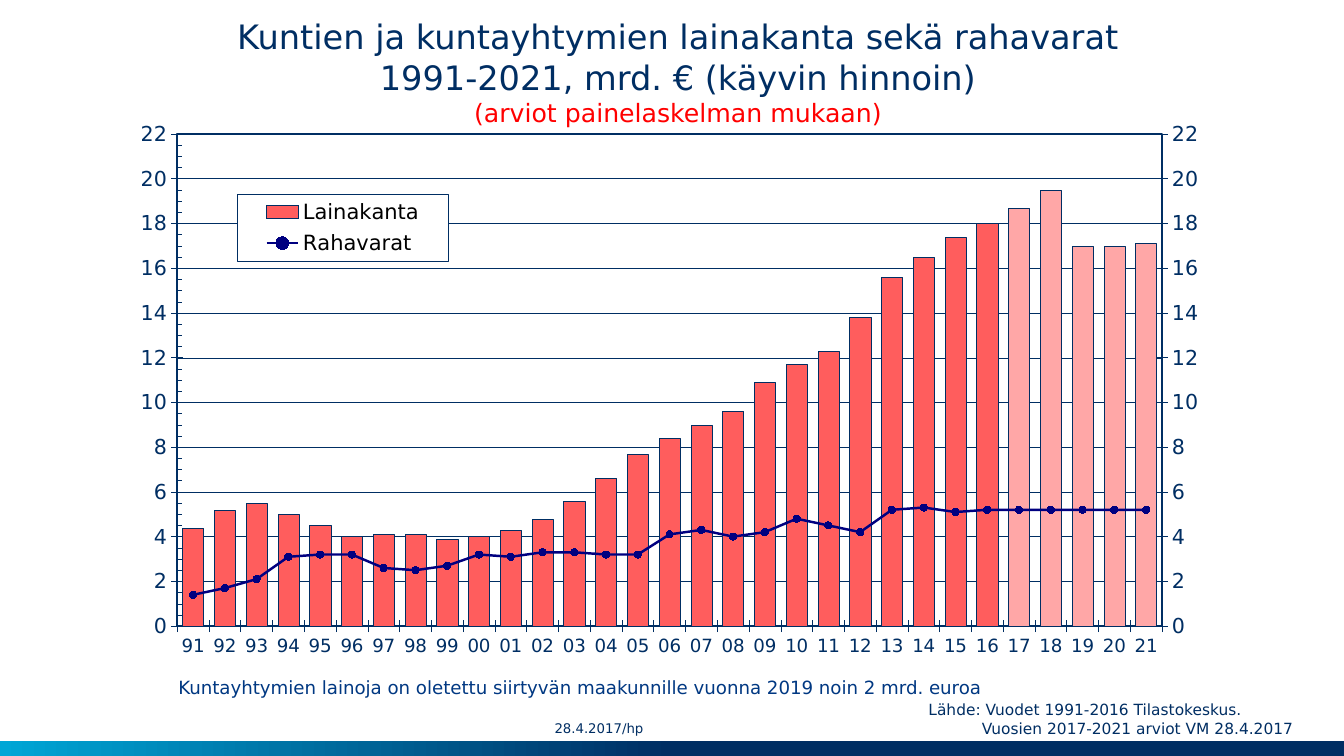
from copy import deepcopy
from dataclasses import dataclass

from pptx import Presentation, oxml, util as u
from pptx.chart import data as cd
from pptx.dml.color import RGBColor
from pptx.enum import chart as ec, dml, shapes, text
from pptx.oxml.ns import nsdecls, qn


@dataclass(frozen=True)
class Theme:
    font: str = "DejaVu Sans"
    navy: str = "002E63"
    cyan: str = "00A6D6"
    note_blue: str = "003882"
    red: str = "FF0000"
    loan: str = "FF5D5D"
    loan_forecast: str = "FFA7A7"
    cash: str = "000080"
    black: str = "000000"
    title_size: float = 24
    subtitle_size: float = 18
    legend_size: float = 15
    value_size: float = 14.7
    year_size: float = 13
    source_size: float = 11
    date_size: float = 9.5


YEARS = [f"{year % 100:02d}" for year in range(1991, 2022)]
FIRST_FORECAST = YEARS.index("17")
LOANS = [4.4, 5.2, 5.5, 5, 4.5, 4, 4.1, 4.1, 3.9, 4, 4.3, 4.8, 5.6, 6.6, 7.7, 8.4,
         9, 9.6, 10.9, 11.7, 12.3, 13.8, 15.6, 16.5, 17.4, 18, 18.7, 19.5, 17, 17, 17.1]
CASH = [1.4, 1.7, 2.1, 3.1, 3.2, 3.2, 2.6, 2.5, 2.7, 3.2, 3.1, 3.3, 3.3, 3.2, 3.2, 4.1,
        4.3, 4, 4.2, 4.8, 4.5, 4.2, 5.2, 5.3, 5.1, 5.2, 5.2, 5.2, 5.2, 5.2, 5.2]


def box(*lengths):
    return [u.Inches(length) for length in lengths]


def chart_xml(tag, body):
    return oxml.parse_xml(f"<c:{tag} {nsdecls('c', 'a')}>{body}</c:{tag}>")


def manual_layout(x, y, w, h, inner=False):
    target = '<c:layoutTarget val="inner"/>' if inner else ""
    sizes = "".join(f'<c:{k} val="{v}"/>' for k, v in zip("xywh", (x, y, w, h)))
    return chart_xml("layout", f'<c:manualLayout>{target}<c:xMode val="edge"/>'
                               f'<c:yMode val="edge"/>{sizes}</c:manualLayout>')


def frame(fill, color, points):
    return chart_xml("spPr", f'{fill}<a:ln w="{u.Pt(points)}"><a:solidFill>'
                             f'<a:srgbClr val="{color}"/></a:solidFill></a:ln>')


class LoanSlide:
    def __init__(self, slide, theme):
        self.slide, self.theme = slide, theme

    def style_font(self, font, size, color):
        font.name, font.size, font.bold = self.theme.font, u.Pt(size), False
        font.color.rgb = RGBColor.from_string(color)

    def style_line(self, line, color, points):
        line.color.rgb = RGBColor.from_string(color)
        line.width = u.Pt(points)

    def style_fill(self, fill, color):
        fill.solid()
        fill.fore_color.rgb = RGBColor.from_string(color)

    def gradient_bar(self, place):
        bar = self.slide.shapes.add_shape(shapes.MSO_SHAPE.RECTANGLE, *box(*place))
        bar.shadow.inherit = False
        bar.line.fill.background()
        bar.fill.gradient()
        bar.fill.gradient_angle = 180
        stops = ((0.5, self.theme.navy), (1, self.theme.cyan))
        for stop, (position, color) in zip(bar.fill.gradient_stops, stops):
            stop.position = position
            stop.color.rgb = RGBColor.from_string(color)

    def text_box(self, place, lines, size, color, margins=(0.1, 0.05),
                 anchor=text.MSO_ANCHOR.TOP, align=text.PP_ALIGN.LEFT):
        body = self.slide.shapes.add_textbox(*box(*place)).text_frame
        body.word_wrap, body.vertical_anchor = True, anchor
        body.margin_left = body.margin_right = u.Inches(margins[0])
        body.margin_top = body.margin_bottom = u.Inches(margins[1])
        body.text = "\n".join(lines)
        for paragraph in body.paragraphs:
            paragraph.alignment = align
            for run in paragraph.runs:
                self.style_font(run.font, size, color)
        return body

    def style_axis(self, axis, size):
        axis.major_tick_mark = ec.XL_TICK_MARK.CROSS
        self.style_font(axis.tick_labels.font, size, self.theme.navy)
        self.style_line(axis.format.line, self.theme.navy, 0.3)

    def loan_chart(self, place):
        theme = self.theme
        figures = cd.CategoryChartData(number_format="0.0")
        figures.categories = YEARS
        figures.add_series("Lainakanta", LOANS)
        figures.add_series("Rahavarat", CASH)
        chart = self.slide.shapes.add_chart(
            ec.XL_CHART_TYPE.COLUMN_CLUSTERED, *box(*place), figures).chart
        chart.has_title = False
        self.style_font(chart.font, theme.value_size, theme.navy)

        # Axes
        self.style_axis(chart.category_axis, theme.year_size)
        values = chart.value_axis
        self.style_axis(values, theme.value_size)
        values.minimum_scale, values.maximum_scale, values.major_unit = 0, 22, 2
        values.tick_labels.number_format = "0"
        values.tick_labels.number_format_is_linked = False
        values.has_major_gridlines = True
        self.style_line(values.major_gridlines.format.line, theme.navy, 0.25)
        values.major_gridlines.format.line.dash_style = dml.MSO_LINE.ROUND_DOT
        self.add_cash_axis(chart)
        values.minor_unit = 0.5
        values.minor_tick_mark = ec.XL_TICK_MARK.INSIDE

        # Loan columns, paler for the forecast years
        columns, cash_line = chart.plots
        columns.gap_width, columns.vary_by_categories = 50, False
        loans = columns.series[0]
        self.style_fill(loans.format.fill, theme.loan)
        self.style_line(loans.format.line, theme.navy, 0.25)
        for index in range(FIRST_FORECAST, len(YEARS)):
            forecast = loans.points[index].format
            self.style_fill(forecast.fill, theme.loan_forecast)
            self.style_line(forecast.line, theme.navy, 0.25)

        # Cash line
        cash = cash_line.series[0]
        cash.smooth = False
        self.style_line(cash.format.line, theme.cash, 1.75)
        cash.marker.style, cash.marker.size = ec.XL_MARKER_STYLE.CIRCLE, 5
        self.style_fill(cash.marker.format.fill, theme.cash)
        self.style_line(cash.marker.format.line, theme.cash, 0.75)

        # Plot frame and legend
        area = chart.element.find(".//" + qn("c:plotArea"))
        for layout in area.findall(qn("c:layout")):
            area.remove(layout)
        area.insert(0, manual_layout(0.061, 0.036, 0.88, 0.88, inner=True))
        area.append(frame("<a:noFill/>", theme.navy, 1.5))
        chart.has_legend = True
        chart.legend.position = ec.XL_LEGEND_POSITION.RIGHT
        chart.legend.include_in_layout = False
        self.style_font(chart.legend.font, theme.legend_size, theme.black)
        overlay = chart.element.find(".//" + qn("c:legend")).find(qn("c:overlay"))
        overlay.addprevious(manual_layout(0.115, 0.143, 0.188, 0.121))
        white = '<a:solidFill><a:srgbClr val="FFFFFF"/></a:solidFill>'
        overlay.addnext(frame(white, theme.navy, 0.5))

    def add_cash_axis(self, chart):
        """Move the second series to a line plot on a right-hand axis."""
        area = chart.element.find(".//" + qn("c:plotArea"))
        bars = area.find(qn("c:barChart"))
        cash = bars.findall(qn("c:ser"))[1]
        for unused in cash.findall(qn("c:invertIfNegative")):
            cash.remove(unused)
        line = chart_xml("lineChart", '<c:grouping val="standard"/><c:varyColors val="0"/>'
                         '<c:marker val="1"/><c:axId val="501"/><c:axId val="502"/>')
        line.insert(2, cash)
        bars.addnext(line)
        years = deepcopy(area.find(qn("c:catAx")))
        right = deepcopy(area.find(qn("c:valAx")))
        right.remove(right.find(qn("c:majorGridlines")))
        for axis, own, other in ((years, "501", "502"), (right, "502", "501")):
            axis.find(qn("c:axId")).set("val", own)
            axis.find(qn("c:crossAx")).set("val", other)
            area.append(axis)
        years.find(qn("c:delete")).set("val", "1")
        right.find(qn("c:axPos")).set("val", "r")
        right.find(qn("c:crosses")).set("val", "max")


def main():
    deck = Presentation()
    deck.slide_width, deck.slide_height = box(13.33, 7.5)
    theme = Theme()
    page = LoanSlide(deck.slides.add_slide(deck.slide_layouts[6]), theme)

    # Footer band
    page.gradient_bar((0, 7.35, 13.33, 0.15))

    # Title with red subtitle
    heading = page.text_box(
        (2.02, 0.13, 9.41, 1.18),
        ["Kuntien ja kuntayhtymien lainakanta sekä rahavarat\v"
         "1991-2021, mrd. € (käyvin hinnoin)\v(arviot painelaskelman mukaan)"],
        theme.title_size, theme.navy, (0, 0.05),
        text.MSO_ANCHOR.BOTTOM, text.PP_ALIGN.CENTER)
    subtitle = heading.paragraphs[0].runs[-1]
    page.style_font(subtitle.font, theme.subtitle_size, theme.red)

    # Loans and cash
    page.loan_chart((1.08, 1.13, 11.1, 5.55))

    # Source, date and note
    source = page.text_box(
        (9.11, 6.9, 4.02, 0.47),
        ["Lähde: Vuodet 1991-2016 Tilastokeskus.", "Vuosien 2017-2021 arviot VM 28.4.2017"],
        theme.source_size, theme.navy)
    source.paragraphs[1]._p.get_or_add_pPr().set("marL", str(u.Inches(0.53)))
    page.text_box((5.5, 7.06, 1.64, 0.32), ["28.4.2017/hp"], theme.date_size, theme.navy,
                  (0, 0), text.MSO_ANCHOR.MIDDLE)
    page.text_box(
        (1.67, 6.66, 8.64, 0.32),
        ["Kuntayhtymien lainoja on oletettu siirtyvän maakunnille vuonna 2019 noin 2 mrd. euroa"],
        theme.year_size, theme.note_blue)

    deck.save("out.pptx")


if __name__ == "__main__":
    main()
